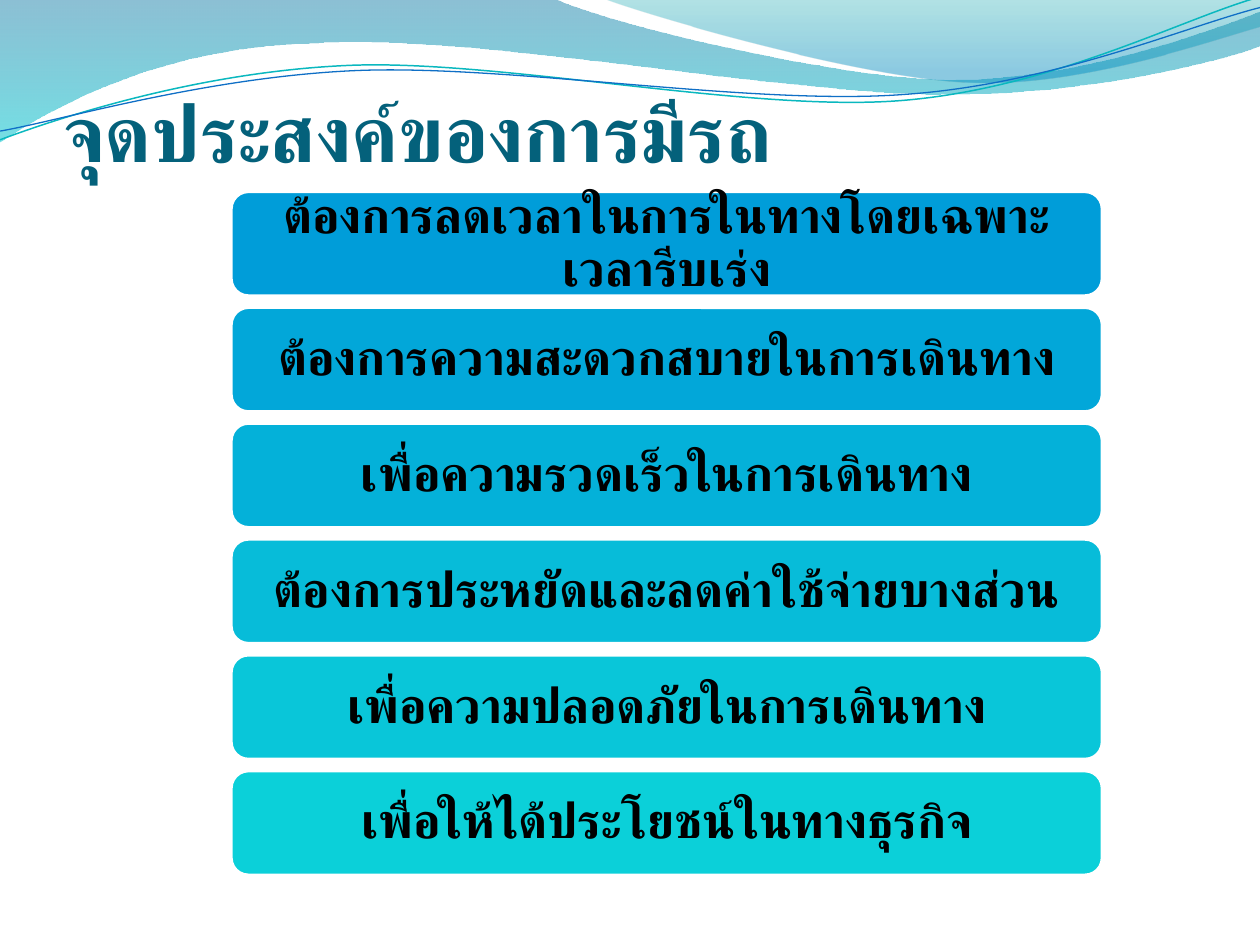
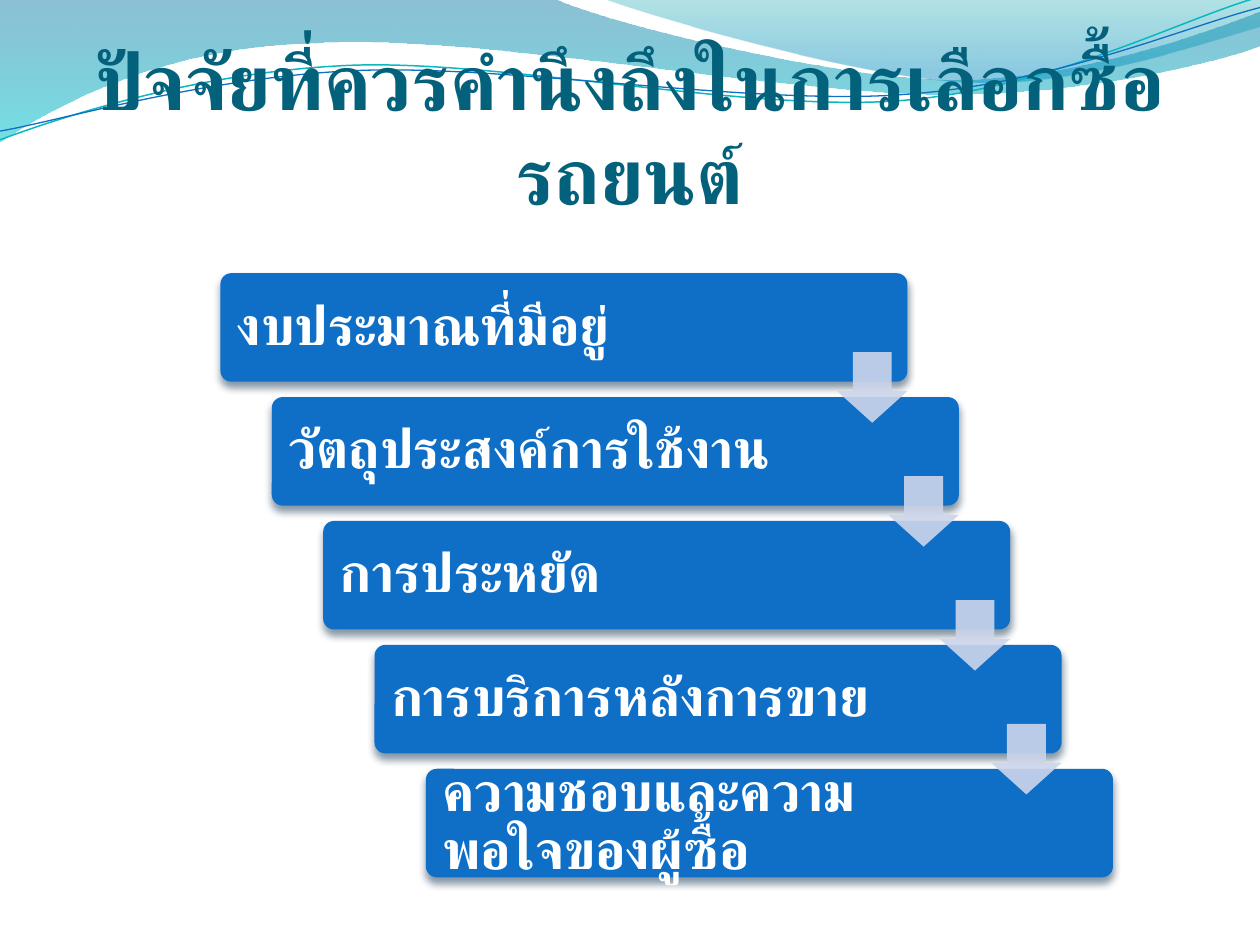
"""Builds two Thai slides on car ownership: reasons to own one and factors in choosing one."""
from dataclasses import dataclass

from lxml.etree import SubElement
from pptx import Presentation
from pptx.dml.color import RGBColor
from pptx.enum.shapes import MSO_SHAPE
from pptx.enum.text import MSO_ANCHOR, MSO_AUTO_SIZE, PP_ALIGN
from pptx.oxml.ns import qn
from pptx.util import Pt

PURPOSE_TITLE = "จุดประสงค์ของการมีรถ"
PURPOSES = [
    "ต้องการลดเวลาในการในทางโดยเฉพาะเวลารีบเร่ง",
    "ต้องการความสะดวกสบายในการเดินทาง",
    "เพื่อความรวดเร็วในการเดินทาง",
    "ต้องการประหยัดและลดค่าใช้จ่ายบางส่วน",
    "เพื่อความปลอดภัยในการเดินทาง",
    "เพื่อให้ได้ประโยชน์ในทางธุรกิจ",
]
FACTOR_TITLE = "ปัจจัยที่ควรคำนึงถึงในการเลือกซื้อรถยนต์"
FACTORS = [
    "งบประมาณที่มีอยู่",
    "วัตถุประสงค์การใช้งาน",
    "การประหยัด",
    "การบริการหลังการขาย",
    "ความชอบและความพอใจของผู้ซื้อ",
]


@dataclass(frozen=True)
class Theme:
    """Colours, font and type sizes of the deck."""
    font: str = "Arial"
    title_size: int = 45
    purpose_size: int = 28
    factor_size: int = 31
    title: str = "04617B"
    dark: str = "000000"
    light: str = "FFFFFF"
    ramp_start: str = "009DD9"
    ramp_end: str = "0BD0D9"
    factor: str = "0F6FC6"
    arrow: str = "CCD5EA"
    shadow: str = "042747"


THEME = Theme()

# Outline steps: two numbers draw a line, six numbers a cubic curve.
WAVES = [
    ([(0, 0), (316.8, -0.7), (342.7, 12.2, 478.1, 45.4, 545.8, 45.4),
      (614.2, 45.4, 689.8, 18.7, 720, 6.5), (720.7, 25.9),
      (707.8, 31.7, 626.4, 54.7, 537.1, 54), (447.8, 54, 275, 20.2, 185, 24.5),
      (92.9, 25.9, 33.1, 59.8, -0.7, 81.4), (0, 0)],
     [(0, "0074A1", 45), (1, "00C6CF", 55)]),
    ([(344.9, -0.7), (366.5, 7.9, 491, 44.6, 553.7, 46.8),
      (616.3, 49.7, 691.9, 23, 720, 15.1), (720, 0), (344.9, -0.7)],
     [(0, "00A1A9", 30), (0.8, "008BBF", 45)]),
]
STRANDS = [
    ([(0, 79.9), (34.6, 67, 113.8, 41, 199.4, 37.4),
      (284.4, 33.8, 427, 64.1, 513.4, 57.6), (599.8, 51.1, 675.4, 10.8, 718.6, -1.4)],
     "0AB8BF", 0.85),
    ([(0, 74.9), (33.8, 69.1, 118.1, 43.9, 203.8, 40.3),
      (290.2, 36.7, 429.8, 60.5, 516.2, 54), (601.9, 48.2, 677.5, 15.1, 720, 4.3)],
     "0F6FC6", 0.75),
]


def rgb(code):
    """Return the colour for a hex code."""
    return RGBColor.from_string(code)


def blend(start, end, share):
    """Return the hex code that lies the given share of the way between two colours."""
    return "".join(f"{round(a + (b - a) * share):02X}" for a, b in zip(rgb(start), rgb(end)))


def set_opacity(colour, percent):
    """Give a colour element an opacity."""
    SubElement(colour, qn("a:alpha"), val=str(percent * 1000))


def add_outline(page, steps, closed):
    """Draw a freeform along the steps, joining three points into each cubic curve."""
    start, *rest = [(Pt(x), Pt(y)) for step in steps for x, y in zip(step[::2], step[1::2])]
    builder = page.shapes.build_freeform(*start)
    builder.add_line_segments(rest, close=closed)
    outline = builder.convert_to_shape()
    outline.shadow.inherit = False
    segments = iter(list(outline.element.spPr.iter(qn("a:lnTo"))))
    for step in steps[1:]:
        segment = next(segments)
        if len(step) == 6:
            segment.tag = qn("a:cubicBezTo")
            for _ in range(2):
                extra = next(segments)
                segment.append(extra[0])
                extra.getparent().remove(extra)
    return outline


def decorate_layout(layout, page):
    """Draw the waves and strands once and place them on the shared layout."""
    for holder in list(layout.placeholders):
        if holder.placeholder_format.idx:
            layout.shapes.element.remove(holder.element)
    outlines = []
    for steps, stops in WAVES:
        wave = add_outline(page, steps, True)
        wave.line.fill.background()
        wave.fill.gradient()
        wave.fill.gradient_angle = 270
        for stop, (position, colour, _) in zip(wave.fill.gradient_stops, stops):
            stop.position, stop.color.rgb = position, rgb(colour)
        colours = list(wave.element.spPr.iter(qn("a:srgbClr")))
        for colour, (_, _, percent) in zip(colours, stops):
            set_opacity(colour, percent)
        outlines.append(wave)
    for steps, colour, width in STRANDS:
        strand = add_outline(page, steps, False)
        strand.fill.background()
        strand.line.color.rgb, strand.line.width = rgb(colour), Pt(width)
        outlines.append(strand)
    for outline in outlines:
        layout.shapes.element.append(outline.element)


def write(frame, text, size, colour, align, anchor, insets, spacing):
    """Fill a text frame with one bold paragraph."""
    frame.text = text
    frame.word_wrap, frame.auto_size = True, MSO_AUTO_SIZE.NONE
    frame.vertical_anchor = anchor
    (frame.margin_left, frame.margin_top,
     frame.margin_right, frame.margin_bottom) = map(Pt, insets)
    para = frame.paragraphs[0]
    para.alignment, para.line_spacing = align, spacing
    font = para.font
    font.name, font.size, font.bold = THEME.font, Pt(size), True
    font.color.rgb = rgb(colour)
    properties = para._p.find(f".//{qn('a:defRPr')}")
    SubElement(properties, qn("a:cs"), typeface=THEME.font)


def set_title(page, text, top, height, align):
    """Place and format the title placeholder."""
    title = page.shapes.title
    title.left, title.top, title.width, title.height = map(Pt, (36, top, 648, height))
    write(title.text_frame, text, THEME.title_size, THEME.title, align,
          MSO_ANCHOR.BOTTOM, (0, 3.6, 0, 0), 1.0)


def add_block(page, kind, place, colour):
    """Add a filled preset shape without line or shadow."""
    block = page.shapes.add_shape(kind, *map(Pt, place))
    block.shadow.inherit = False
    block.fill.solid()
    block.fill.fore_color.rgb = rgb(colour)
    block.line.fill.background()
    return block


def add_label(page, place, text, size, colour, align, inset):
    """Add a text box centred vertically over a block."""
    box = page.shapes.add_textbox(*map(Pt, place))
    write(box.text_frame, text, size, colour, align, MSO_ANCHOR.MIDDLE, (inset,) * 4, 0.9)


def add_shadow(block):
    """Give a block a soft shadow below it."""
    effects = block.element.spPr.find(qn("a:effectLst"))
    shadow = SubElement(effects, qn("a:outerShdw"), blurRad=str(Pt(4.5)), dist=str(Pt(3)),
                        dir="5400000", rotWithShape="0")
    set_opacity(SubElement(shadow, qn("a:srgbClr"), val=THEME.shadow), 48)


def build_purposes(page):
    """Stack the purposes as bars that shift in colour."""
    set_title(page, PURPOSE_TITLE, 36, 66, PP_ALIGN.LEFT)
    left, top, width, height, pitch = 132, 109.4, 498, 59.8, 66.2
    for index, purpose in enumerate(PURPOSES):
        place = (left, top + index * pitch, width, height)
        colour = blend(THEME.ramp_start, THEME.ramp_end, index / (len(PURPOSES) - 1))
        bar = add_block(page, MSO_SHAPE.ROUNDED_RECTANGLE, place, colour)
        bar.line.color.rgb, bar.line.width = rgb(THEME.light), Pt(2)
        add_label(page, place, purpose, THEME.purpose_size, THEME.dark, PP_ALIGN.CENTER, 8.4)


def build_factors(page):
    """Lay the factors out as a staircase joined by arrows."""
    set_title(page, FACTOR_TITLE, 55.5, 70.5, PP_ALIGN.CENTER)
    left, top, width, height, label_width = 126, 156.1, 392.6, 62, 323
    shift, pitch, arrow_size, arrow_drop = 29.35, 70.8, 40.3, 45.2
    corners = [(left + index * shift, top + index * pitch) for index in range(len(FACTORS))]
    for factor, corner in zip(FACTORS, corners):
        step = add_block(page, MSO_SHAPE.ROUNDED_RECTANGLE, (*corner, width, height),
                         THEME.factor)
        step.adjustments[0] = 0.1
        add_shadow(step)
        add_label(page, (*corner, label_width, height), factor, THEME.factor_size,
                  THEME.light, PP_ALIGN.LEFT, 9.4)
    for x, y in corners[:-1]:
        place = (x + width - arrow_size, y + arrow_drop, arrow_size, arrow_size)
        arrow = add_block(page, MSO_SHAPE.DOWN_ARROW, place, THEME.arrow)
        arrow.adjustments[0], arrow.adjustments[1] = 0.55, 0.45
        set_opacity(arrow.element.spPr.find(f".//{qn('a:srgbClr')}"), 90)


def main():
    """Build and save the deck."""
    deck = Presentation()
    deck.slide_width, deck.slide_height = Pt(720), Pt(540)
    layout = deck.slide_layouts[5]
    pages = [deck.slides.add_slide(layout) for _ in range(2)]
    decorate_layout(layout, pages[0])
    build_purposes(pages[0])
    build_factors(pages[1])
    deck.save("out.pptx")


if __name__ == "__main__":
    main()
